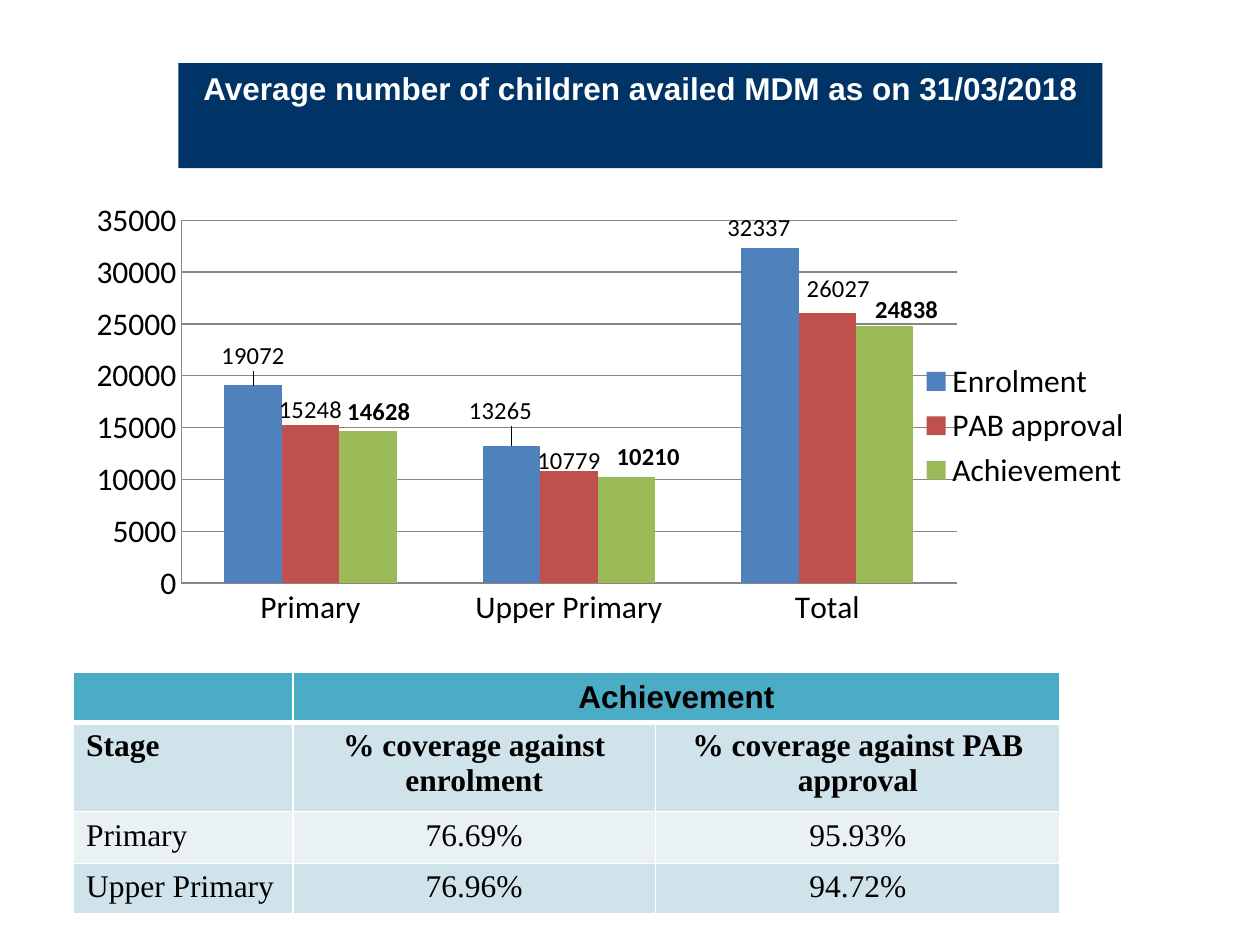
from lxml import etree
from pptx import Presentation
from pptx.chart.data import CategoryChartData
from pptx.dml.color import RGBColor
from pptx.enum import chart as ch, text
from pptx.oxml import parse_xml
from pptx.oxml.ns import nsdecls, qn
from pptx.util import Pt

NAVY = RGBColor(0x00, 0x33, 0x66)
WHITE = RGBColor(0xFF, 0xFF, 0xFF)
BLACK = RGBColor(0, 0, 0)
GREY = RGBColor(0x86, 0x86, 0x86)
TEAL = RGBColor(0x4B, 0xAC, 0xC6)
BAND_DARK = RGBColor(0xD0, 0xE3, 0xEA)
BAND_LIGHT = RGBColor(0xE9, 0xF1, 0xF5)

STAGES = ["Primary", "Upper Primary", "Total"]
# name, values, colour, bold labels, label shifts as fractions of the chart
SERIES = [
    ("Enrolment", (19072, 13265, 32337), RGBColor(0x4F, 0x81, 0xBD), False,
     ((0, -0.02), (-0.01, -0.03), (-0.01, 0))),
    ("PAB approval", (15248, 10779, 26027), RGBColor(0xC0, 0x50, 0x4D), False,
     ((0, 0.01), (0, 0.02), (0.01, -0.01))),
    ("Achievement", (14628, 10210, 24838), RGBColor(0x9B, 0xBB, 0x59), True,
     ((0.01, 0), (0.02, 0), (0.02, 0.01))),
]
ROWS = [
    ("", "Achievement", ""),
    ("Stage", "% coverage against enrolment", "% coverage against PAB approval"),
    ("Primary", "76.69%", "95.93%"),
    ("Upper Primary", "76.96%", "94.72%"),
]
ROW_FILLS = [TEAL, BAND_DARK, BAND_LIGHT, BAND_DARK]
COL_WIDTHS = [125.3, 207.4, 231.1]
ROW_HEIGHTS = [27.5, 51, 29.5, 29]


def set_font(font, size, name, color=BLACK, bold=False):
    font.size, font.name, font.bold = Pt(size), name, bold
    font.color.rgb = color


def add_title(slide, x, y, w, h):
    sp = slide.shapes.title
    sp.left, sp.top, sp.width, sp.height = Pt(x), Pt(y), Pt(w), Pt(h)
    sp.fill.solid()
    sp.fill.fore_color.rgb = NAVY
    tf = sp.text_frame
    tf.text = "Average number of children availed MDM as on 31/03/2018"
    tf.auto_size = text.MSO_AUTO_SIZE.SHAPE_TO_FIT_TEXT
    tf.vertical_anchor = text.MSO_ANCHOR.TOP
    p = tf.paragraphs[0]
    p.alignment = text.PP_ALIGN.CENTER
    set_font(p.font, 18, "Arial", WHITE, True)


def manual_layout(**values):
    items = "".join(f'<c:{k} val="{v}"/>' for k, v in values.items())
    return parse_xml(f'<c:layout {nsdecls("c")}><c:manualLayout>{items}'
                     '</c:manualLayout></c:layout>')


def style_series(series, color, bold, shifts):
    series.format.fill.solid()
    series.format.fill.fore_color.rgb = color
    series.invert_if_negative = False
    labels = series.data_labels
    labels.show_value = True
    set_font(labels.font, 14, "Calibri", bold=bold)
    for i, (dx, dy) in enumerate(shifts):
        label = series.points[i].data_label
        set_font(label.font, 14, "Calibri", bold=bold)
        label.position = ch.XL_LABEL_POSITION.OUTSIDE_END
        d_lbl = labels._element.findall(qn("c:dLbl"))[i]
        d_lbl.insert(1, manual_layout(x=dx, y=dy))


def add_coverage_chart(slide, x, y, w, h):
    data = CategoryChartData()
    data.categories = STAGES
    for name, values, *_ in SERIES:
        data.add_series(name, values)
    chart = slide.shapes.add_chart(ch.XL_CHART_TYPE.COLUMN_CLUSTERED,
                                   Pt(x), Pt(y), Pt(w), Pt(h), data).chart
    set_font(chart.font, 18, "Calibri")
    chart.has_title = False
    chart.has_legend = True
    chart.legend.position = ch.XL_LEGEND_POSITION.RIGHT
    chart.legend.include_in_layout = False

    plot = chart.plots[0]
    plot.gap_width, plot.overlap, plot.vary_by_categories = 150, 0, False
    for series, (_, _, color, bold, shifts) in zip(plot.series, SERIES):
        style_series(series, color, bold, shifts)

    for axis in (chart.category_axis, chart.value_axis):
        axis.major_tick_mark = axis.minor_tick_mark = ch.XL_TICK_MARK.NONE
        axis.format.line.color.rgb = GREY
    axis = chart.value_axis
    axis.minimum_scale, axis.maximum_scale, axis.major_unit = 0, 35000, 5000
    axis.major_gridlines.format.line.color.rgb = GREY

    area = chart._chartSpace.chart.plotArea
    for old in area.findall(qn("c:layout")):
        area.remove(old)
    area.insert(0, manual_layout(layoutTarget="inner", xMode="edge", yMode="edge",
                                 x=0.118, y=0.064, w=0.71, h=0.77))


def set_borders(cell, bottom):
    tc_pr = cell._tc.get_or_add_tcPr()
    sides = (("lnL", 1), ("lnR", 1), ("lnT", 1), ("lnB", bottom))
    for i, (side, width) in enumerate(sides):
        ln = etree.Element(qn(f"a:{side}"), w=str(Pt(width)))
        fill = etree.SubElement(ln, qn("a:solidFill"))
        etree.SubElement(fill, qn("a:srgbClr"), val=str(WHITE))
        tc_pr.insert(i, ln)


def add_achievement_table(slide, x, y):
    table = slide.shapes.add_table(len(ROWS), len(COL_WIDTHS), Pt(x), Pt(y),
                                   Pt(sum(COL_WIDTHS)), Pt(sum(ROW_HEIGHTS))).table
    for column, width in zip(table.columns, COL_WIDTHS):
        column.width = Pt(width)
    for r, row in enumerate(ROWS):
        table.rows[r].height = Pt(ROW_HEIGHTS[r])
        for c, words in enumerate(row):
            cell = table.cell(r, c)
            cell.text = words
            cell.fill.solid()
            cell.fill.fore_color.rgb = ROW_FILLS[r]
            set_borders(cell, bottom=3 if r == 0 else 1)
            p = cell.text_frame.paragraphs[0]
            p.alignment = text.PP_ALIGN.CENTER if c else text.PP_ALIGN.LEFT
            set_font(p.font, 18, "Times New Roman" if r else "Arial", bold=r < 2)
    header = table.cell(0, 1)
    header.merge(table.cell(0, 2))
    header.vertical_anchor = text.MSO_ANCHOR.MIDDLE


def main():
    prs = Presentation()
    prs.slide_width, prs.slide_height = Pt(720), Pt(540)
    slide = prs.slides.add_slide(prs.slide_layouts[5])
    add_title(slide, 102, 36, 528, 29)
    add_coverage_chart(slide, 30, 108.7, 624, 269.3)
    add_achievement_table(slide, 42, 384)
    prs.save("out.pptx")


if __name__ == "__main__":
    main()
